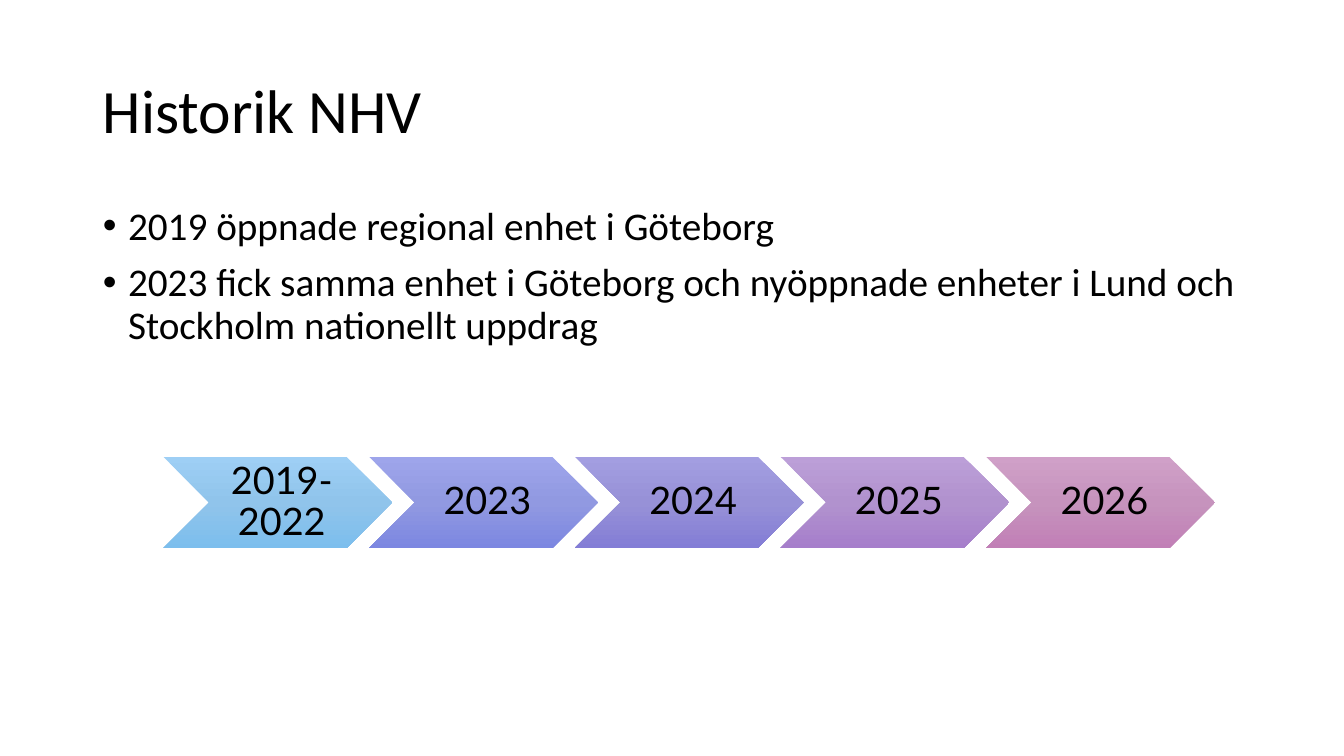
from dataclasses import dataclass

from copy import deepcopy
from lxml.etree import SubElement
from pptx import Presentation
from pptx.dml.color import RGBColor
from pptx.enum.shapes import MSO_SHAPE
from pptx.enum.text import MSO_ANCHOR, MSO_AUTO_SIZE, PP_ALIGN
from pptx.oxml.ns import qn
from pptx.util import Inches, Pt


@dataclass(frozen=True)
class Theme:
    text_color: str = "000000"
    text_font: str = "Calibri"
    step_font: str = "Lato"
    title_size: int = 44
    body_size: int = 28
    step_size: int = 27
    line_spacing: float = 0.9


@dataclass(frozen=True)
class TimelineStep:
    label: str
    gradient: tuple[str, str, str]


THEME = Theme()
BULLETS = [
    "2019 öppnade regional enhet i Göteborg",
    "2023 fick samma enhet i Göteborg och nyöppnade enheter i Lund och "
    "Stockholm nationellt uppdrag",
]
STEPS = [
    TimelineStep("2019-2022", ("9ECFF5", "90C4EB", "7CBEED")),
    TimelineStep("2023", ("9EA5EB", "9199E1", "7C87E1")),
    TimelineStep("2024", ("A39EE1", "9791D7", "837DD6")),
    TimelineStep("2025", ("BC9FD8", "B192CE", "A67ECB")),
    TimelineStep("2026", ("D0A0C8", "C693BD", "C17FB6")),
]
STEP_LEFT, STEP_TOP, STEP_WIDTH, STEP_HEIGHT = 1.62, 4.53, 2.27, 0.91
STEP_PITCH = 2.04


def place(shape, left: float, top: float, width: float, height: float) -> None:
    shape.left, shape.top = Inches(left), Inches(top)
    shape.width, shape.height = Inches(width), Inches(height)


def format_paragraph(paragraph, font_name: str, size: int, alignment) -> None:
    paragraph.alignment = alignment
    paragraph.line_spacing = THEME.line_spacing
    for run in paragraph.runs:
        run.font.name = font_name
        run.font.size = Pt(size)
        run.font.color.rgb = RGBColor.from_string(THEME.text_color)


def add_bullet(paragraph) -> None:
    properties = paragraph._p.get_or_add_pPr()
    properties.set("marL", str(Inches(0.25)))
    properties.set("indent", str(Inches(-0.25)))
    SubElement(properties, qn("a:buFont"), typeface="Arial")
    SubElement(properties, qn("a:buChar"), char="•")


def fill_gradient(fill, colors: tuple[str, ...]) -> None:
    fill.gradient()
    fill.gradient_angle = 270
    stop_list = fill._fill._gradFill.find(qn("a:gsLst"))
    while len(stop_list) < len(colors):
        stop_list.append(deepcopy(stop_list[0]))
    for index, (stop, color) in enumerate(zip(fill.gradient_stops, colors)):
        stop.position = index / (len(colors) - 1)
        stop.color.rgb = RGBColor.from_string(color)


def add_step(slide, step: TimelineStep, left: float) -> None:
    chevron = slide.shapes.add_shape(
        MSO_SHAPE.CHEVRON, Inches(left), Inches(STEP_TOP),
        Inches(STEP_WIDTH), Inches(STEP_HEIGHT))
    chevron.shadow.inherit = False
    chevron.line.fill.background()
    fill_gradient(chevron.fill, step.gradient)
    text_frame = chevron.text_frame
    text_frame.text = step.label
    text_frame.word_wrap = True
    text_frame.vertical_anchor = MSO_ANCHOR.MIDDLE
    text_frame.margin_left = Inches(0.12)
    text_frame.margin_top = text_frame.margin_right = Inches(0.04)
    text_frame.margin_bottom = Inches(0.04)
    format_paragraph(text_frame.paragraphs[0], THEME.step_font,
                     THEME.step_size, PP_ALIGN.CENTER)


def main() -> None:
    presentation = Presentation()
    presentation.slide_width = Inches(13.33)
    presentation.slide_height = Inches(7.5)
    slide = presentation.slides.add_slide(presentation.slide_layouts[1])

    # Title
    title = slide.shapes.title
    place(title, 0.92, 0.4, 11.5, 1.45)
    title.text_frame.text = "Historik NHV"
    title.text_frame.vertical_anchor = MSO_ANCHOR.MIDDLE
    title.text_frame.auto_size = MSO_AUTO_SIZE.NONE
    format_paragraph(title.text_frame.paragraphs[0], THEME.text_font,
                     THEME.title_size, PP_ALIGN.LEFT)

    # Bullet list
    body = slide.placeholders[1]
    place(body, 0.92, 2, 11.5, 4.76)
    body.text_frame.text = "\n".join(BULLETS)
    body.text_frame.auto_size = MSO_AUTO_SIZE.NONE
    for index, paragraph in enumerate(body.text_frame.paragraphs):
        add_bullet(paragraph)
        paragraph.space_before = Pt(10 if index else 0)
        format_paragraph(paragraph, THEME.text_font, THEME.body_size,
                         PP_ALIGN.LEFT)

    # Timeline
    for index, step in enumerate(STEPS):
        add_step(slide, step, STEP_LEFT + index * STEP_PITCH)

    presentation.save("out.pptx")


if __name__ == "__main__":
    main()
